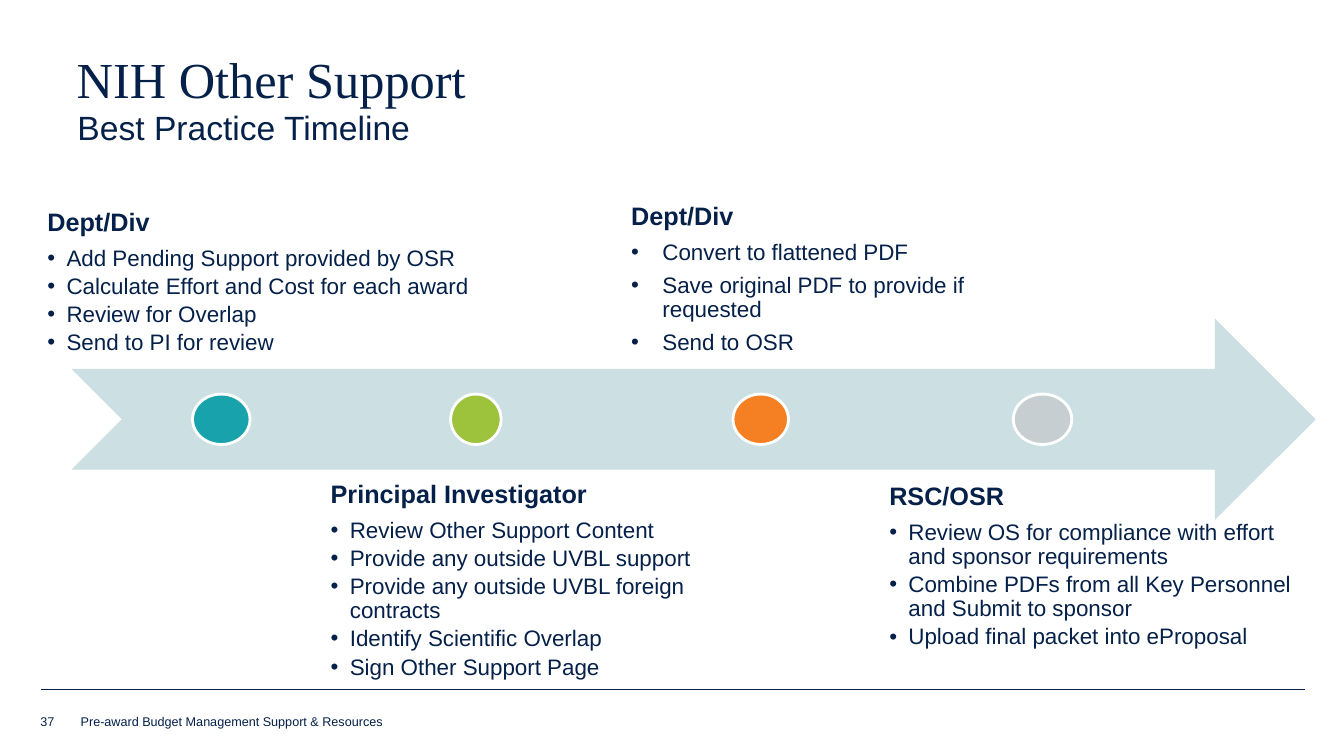
from dataclasses import dataclass

from lxml import etree
from pptx import Presentation
from pptx.dml.color import RGBColor
from pptx.enum.shapes import MSO_CONNECTOR, MSO_SHAPE
from pptx.enum.text import MSO_ANCHOR, MSO_AUTO_SIZE, PP_ALIGN
from pptx.oxml.ns import qn
from pptx.util import Inches, Pt

TOP, BOTTOM = MSO_ANCHOR.TOP, MSO_ANCHOR.BOTTOM
LEFT = PP_ALIGN.LEFT
FIXED = MSO_AUTO_SIZE.NONE
ARROW, OVAL = MSO_SHAPE.NOTCHED_RIGHT_ARROW, MSO_SHAPE.OVAL
STRAIGHT = MSO_CONNECTOR.STRAIGHT

COLORS = {
    "navy": "052049", "pale": "CCE0E3", "white": "FFFFFF", "teal": "18A3AC",
    "green": "9DC23B", "orange": "F58024", "gray": "C7CED1",
}
SANS, SERIF = "Arial", "Times New Roman"
LEADING = 1.15  # natural line height, in font sizes
DOT_TOP, DOT_HIGH = 3.91, 0.5

Box = tuple[float, float, float, float]


@dataclass
class Step:
    """One stage of the timeline: a text block and its dot."""
    owner: str
    tasks: list[str]
    box: Box
    anchor: MSO_ANCHOR
    color: str
    dot_left: float
    dot_wide: float
    indent: float = 0.19
    gap: float = 0.15


STEPS = [
    Step("Dept/Div",
         ["Add Pending Support provided by OSR",
          "Calculate Effort and Cost for each award",
          "Review for Overlap",
          "Send to PI for review"],
         (0.35, 1.65, 4.49, 2), BOTTOM, "teal", 1.91, 0.57),
    Step("Principal Investigator",
         ["Review Other Support Content",
          "Provide any outside UVBL support",
          "Provide any outside UVBL foreign contracts",
          "Identify Scientific Overlap",
          "Sign Other Support Page"],
         (3.16, 4.66, 4.18, 2.15), TOP, "green", 4.47, 0.5),
    Step("Dept/Div",
         ["Convert to flattened PDF",
          "Save original PDF to provide if requested",
          "Send to OSR"],
         (6.14, 2.05, 3.78, 1.6), BOTTOM, "orange", 7.27, 0.55, 0.31, 0.35),
    Step("RSC/OSR",
         ["Review OS for compliance with effort and sponsor requirements",
          "Combine PDFs from all Key Personnel and Submit to sponsor",
          "Upload final packet into eProposal"],
         (8.7, 4.68, 4.49, 2), TOP, "gray", 10.05, 0.58),
]


def rgb(name: str) -> RGBColor:
    return RGBColor.from_string(COLORS[name])


def set_frame(shape, anchor=TOP, pad: float | None = None):
    """Prepare a text frame; pad is an equal inset on all sides."""
    frame = shape.text_frame
    frame.word_wrap = True
    frame.auto_size = FIXED
    frame.vertical_anchor = anchor
    if pad is not None:
        frame.margin_left = frame.margin_right = Inches(pad)
        frame.margin_top = frame.margin_bottom = Inches(pad)
    return frame


def add_box(slide, box: Box, anchor=TOP, pad: float | None = None):
    shape = slide.shapes.add_textbox(*map(Inches, box))
    return set_frame(shape, anchor, pad)


def write(frame, text: str, *, size: float, font: str = SANS,
          bold: bool = False, lines: float = 1.0, gap: float = 0,
          indent: float = 0) -> None:
    """Add a paragraph; gap is in line heights, an indent adds a bullet."""
    para = frame.paragraphs[0]
    if para.runs:
        para = frame.add_paragraph()
    para.alignment = LEFT
    para.line_spacing = lines
    para.space_before = Pt(0)
    para.space_after = Pt(round(size * LEADING * gap, 1))
    run = para.add_run()
    run.text = text
    run.font.size = Pt(size)
    run.font.name = font
    run.font.bold = bold
    run.font.color.rgb = rgb("navy")
    if indent:
        props = para._p.get_or_add_pPr()
        props.set("marL", str(Inches(indent)))
        props.set("indent", str(-Inches(indent)))
        etree.SubElement(props, qn("a:buFont")).set("typeface", SANS)
        etree.SubElement(props, qn("a:buChar")).set("char", "•")


def add_form(slide, kind, box: Box, fill: str, edge: str = "") -> None:
    shape = slide.shapes.add_shape(kind, *map(Inches, box))
    shape.shadow.inherit = False
    shape.fill.solid()
    shape.fill.fore_color.rgb = rgb(fill)
    if edge:
        shape.line.color.rgb = rgb(edge)
        shape.line.width = Pt(2)
    else:
        shape.line.fill.background()


def add_rule(slide, left: float, right: float, y: float) -> None:
    rule = slide.shapes.add_connector(
        STRAIGHT, Inches(left), Inches(y), Inches(right), Inches(y))
    rule.line.color.rgb = rgb("navy")
    rule.line.width = Pt(0.25)
    etree.SubElement(rule._element.spPr, qn("a:effectLst"))


def add_step(slide, step: Step) -> None:
    frame = add_box(slide, step.box, step.anchor, 0.12)
    write(frame, step.owner, size=18, bold=True, lines=0.9, gap=0.35)
    for task in step.tasks:
        write(frame, task, size=16, lines=0.9, gap=step.gap,
              indent=step.indent)
    add_form(slide, OVAL, (step.dot_left, DOT_TOP, step.dot_wide, DOT_HIGH),
             step.color, "white")


def main() -> None:
    deck = Presentation()
    deck.slide_width, deck.slide_height = Inches(13.33), Inches(7.5)
    slide = deck.slides.add_slide(deck.slide_layouts[5])

    # Footer rule and page number
    add_rule(slide, 0.41, 12.94, 6.84)
    write(add_box(slide, (0.4, 7.06, 0.36, 0.17), BOTTOM, 0), "37", size=9)

    # Title and subtitle
    title = slide.shapes.title
    title.left, title.top, title.width, title.height = map(
        Inches, (0.66, 0.46, 11.92, 0.67))
    write(set_frame(title, BOTTOM), "NIH Other Support",
          size=36, font=SERIF, lines=0.85)
    write(add_box(slide, (0.67, 1.01, 11.91, 0.49)),
          "Best Practice Timeline", size=24)

    # Timeline
    add_form(slide, ARROW, (0.71, 3.16, 12.34, 2), "pale")
    for step in STEPS:
        add_step(slide, step)

    # Footer text
    write(add_box(slide, (0.8, 7.08, 6.29, 0.15), BOTTOM, 0),
          "Pre-award Budget Management Support & Resources", size=9)

    deck.save("out.pptx")


if __name__ == "__main__":
    main()
